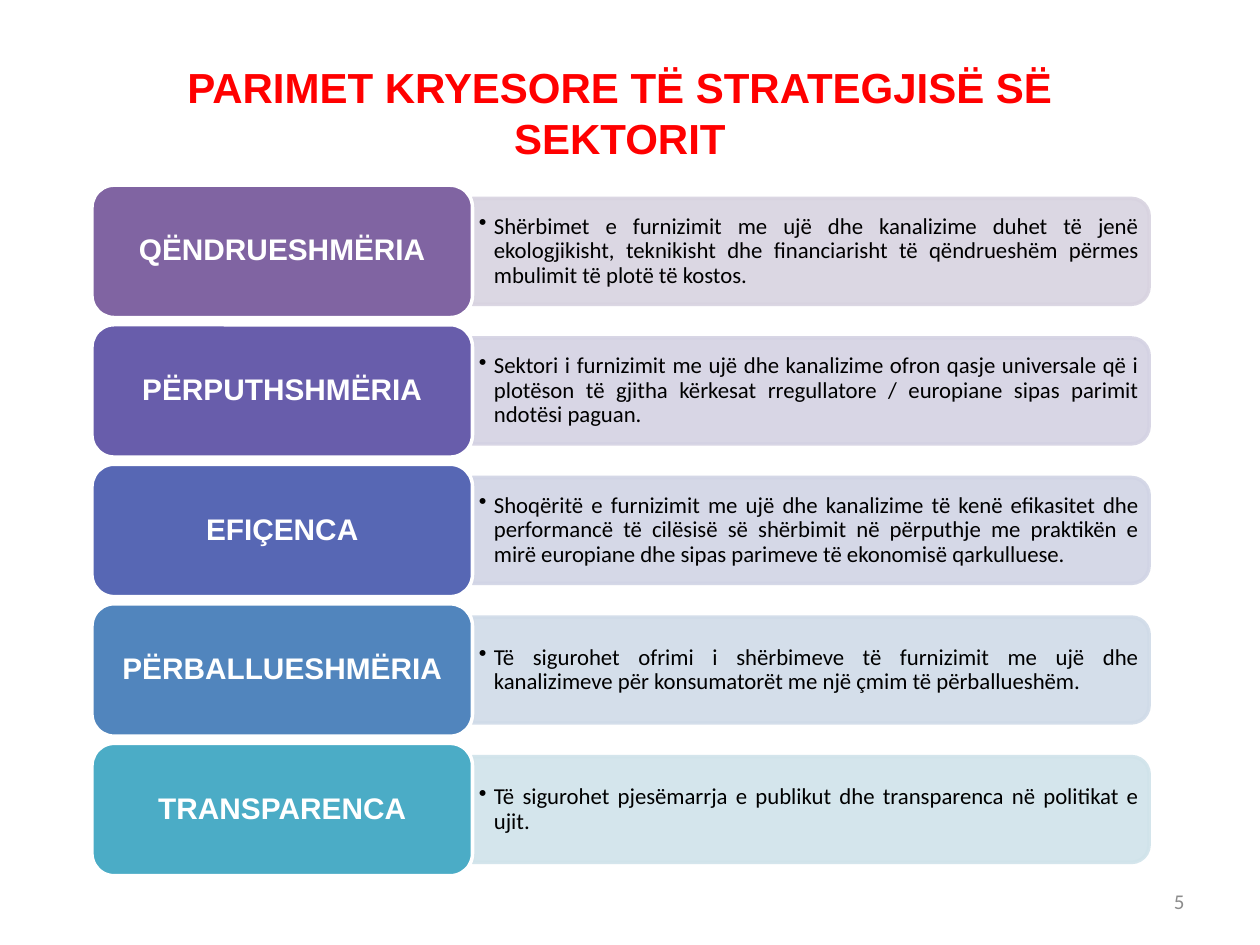
from lxml.etree import SubElement
from pptx import Presentation
from pptx.dml.color import RGBColor
from pptx.enum.shapes import MSO_SHAPE as SHAPE
from pptx.enum.text import MSO_ANCHOR as ANCHOR, MSO_AUTO_SIZE as AUTO_SIZE, PP_ALIGN as ALIGN
from pptx.oxml.ns import qn
from pptx.util import Inches, Pt

COLORS = {"title": "FF0000", "text": "000000", "light": "FFFFFF", "number": "8C8C8C"}

PRINCIPLES = [
    ("QËNDRUESHMËRIA", "8064A2", "D8D3E0",
     "Shërbimet e furnizimit me ujë dhe kanalizime duhet të jenë ekologjikisht, teknikisht "
     "dhe financiarisht të qëndrueshëm përmes mbulimit të plotë të kostos."),
    ("PËRPUTHSHMËRIA", "685DAB", "D4D2E3",
     "Sektori i furnizimit me ujë dhe kanalizime ofron qasje universale që i plotëson të gjitha "
     "kërkesat rregullatore / europiane sipas parimit ndotësi paguan."),
    ("EFIÇENCA", "5767B4", "D1D4E5",
     "Shoqëritë e furnizimit me ujë dhe kanalizime të kenë efikasitet dhe performancë të cilësisë "
     "së shërbimit në përputhje me praktikën e mirë europiane dhe sipas parimeve të ekonomisë "
     "qarkulluese."),
    ("PËRBALLUESHMËRIA", "5185BD", "D0DBE8",
     "Të sigurohet ofrimi i shërbimeve të furnizimit me ujë dhe kanalizimeve për konsumatorët "
     "me një çmim të përballueshëm."),
    ("TRANSPARENCA", "4BACC6", "D0E3EA",
     "Të sigurohet pjesëmarrja e publikut dhe transparenca në politikat e ujit."),
]


def write(shape, text, font, size, color, align, anchor, inset=(0.1, 0.05), bold=False):
    """Set and format the single paragraph of a shape and return it."""
    frame = shape.text_frame
    frame.text = text
    frame.word_wrap = True
    frame.auto_size = AUTO_SIZE.NONE
    frame.vertical_anchor = anchor
    frame.margin_left = frame.margin_right = Inches(inset[0])
    frame.margin_top = frame.margin_bottom = Inches(inset[1])
    para = frame.paragraphs[0]
    para.alignment = align
    span = para.runs[0].font
    span.name, span.size, span.bold = font, Pt(size), bold
    span.color.rgb = RGBColor.from_string(color)
    return para


def paint(shape, fill, line):
    """Give a shape a flat fill and a two-point outline."""
    shape.shadow.inherit = False
    shape.fill.solid()
    shape.fill.fore_color.rgb = RGBColor.from_string(fill)
    shape.line.color.rgb = RGBColor.from_string(line)
    shape.line.width = Pt(2)


def add_bullet(para, indent):
    """Give a paragraph a hanging round bullet."""
    props = para._p.get_or_add_pPr()
    props.set("marL", str(indent))
    props.set("indent", str(-indent))
    SubElement(props, qn("a:buChar")).set("char", "•")


def add_title(page, left, top, width, height):
    """Place the slide title."""
    title = page.shapes.title
    title.left, title.top, title.width, title.height = left, top, width, height
    write(title, "PARIMET KRYESORE TË STRATEGJISË SË SEKTORIT", "Arial", 24,
          COLORS["title"], ALIGN.CENTER, ANCHOR.TOP, bold=True)


def add_bar(page, left, top, width, height, color, text):
    """Place a translucent bar rounded on its right side, with its description."""
    bar = page.shapes.add_shape(
        SHAPE.ROUND_2_SAME_RECTANGLE, left + (width - height) // 2,
        top + (height - width) // 2, height, width)
    bar.rotation = 90
    paint(bar, color, color)
    for tint in bar._element.spPr.iter(qn("a:srgbClr")):
        SubElement(tint, qn("a:alpha")).set("val", "90000")

    margin = Inches(0.04)
    box = page.shapes.add_textbox(left, top + margin, width - margin, height - 2 * margin)
    para = write(box, text, "Calibri", 13, COLORS["text"], ALIGN.JUSTIFY,
                 ANCHOR.MIDDLE, (0.05, 0.03))
    para.line_spacing = 0.9
    add_bullet(para, Inches(0.12))


def add_tile(page, left, top, width, height, color, name):
    """Place the rounded tile that names a principle."""
    tile = page.shapes.add_shape(SHAPE.ROUNDED_RECTANGLE, left, top, width, height)
    paint(tile, color, COLORS["light"])
    para = write(tile, name, "Arial", 17, COLORS["light"], ALIGN.CENTER,
                 ANCHOR.MIDDLE, (0.07, 0.04), bold=True)
    para.line_spacing = 0.9


def add_principles(page, left, top, width, height):
    """Stack the principles evenly, each a tile with a bar on its right."""
    tile_width, tile_height, bar_height = Inches(3.02), Inches(1.05), Inches(0.84)
    pitch = (height - tile_height) // (len(PRINCIPLES) - 1)
    for index, (name, dark, pale, text) in enumerate(PRINCIPLES):
        row_top = top + index * pitch
        add_bar(page, left + tile_width, row_top + (tile_height - bar_height) // 2,
                width - tile_width, bar_height, pale, text)
        add_tile(page, left, row_top, tile_width, tile_height, dark, name)


def add_page_number(page, left, top, width, height):
    """Place the page number."""
    box = page.shapes.add_textbox(left, top, width, height)
    write(box, "5", "Calibri", 12, COLORS["number"], ALIGN.RIGHT, ANCHOR.MIDDLE)


def main():
    """Build the slide and save the deck."""
    deck = Presentation()
    deck.slide_width, deck.slide_height = Inches(10), Inches(7.5)
    page = deck.slides.add_slide(deck.slide_layouts[5])
    add_title(page, Inches(0.59), Inches(0.44), Inches(8.66), Inches(0.91))
    add_principles(page, Inches(0.73), Inches(1.47), Inches(8.39), Inches(5.48))
    add_page_number(page, Inches(7.17), Inches(6.95), Inches(2.33), Inches(0.4))
    deck.save("out.pptx")


if __name__ == "__main__":
    main()
